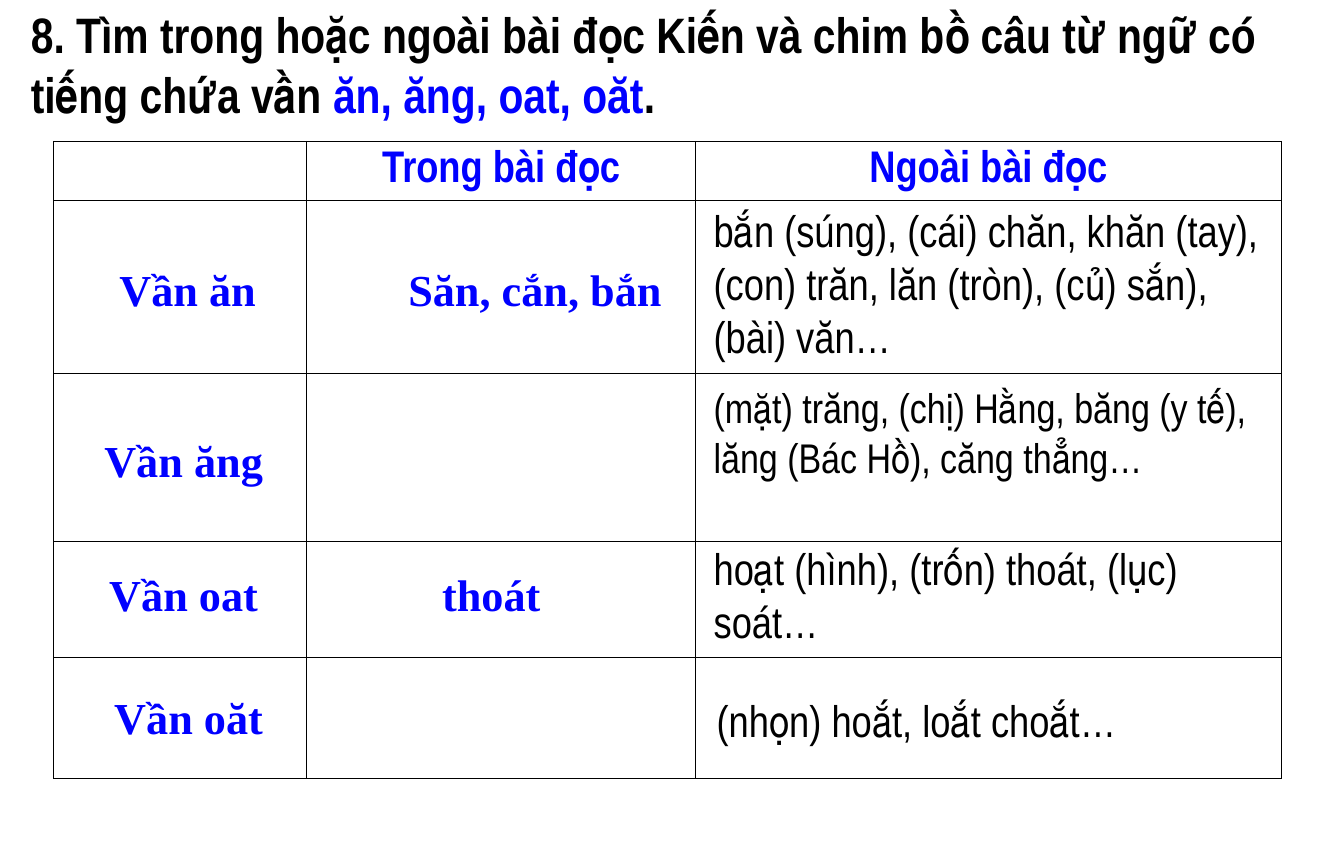
from dataclasses import dataclass

from lxml import etree
from pptx import Presentation
from pptx.dml.color import RGBColor
from pptx.enum.text import MSO_ANCHOR, MSO_AUTO_SIZE, PP_ALIGN
from pptx.oxml.ns import qn
from pptx.slide import Slide
from pptx.table import _Cell
from pptx.text.text import TextFrame, _Paragraph
from pptx.util import Inches, Pt

TOP, MIDDLE = MSO_ANCHOR.TOP, MSO_ANCHOR.MIDDLE
LEFT, CENTER = PP_ALIGN.LEFT, PP_ALIGN.CENTER
GROW = MSO_AUTO_SIZE.SHAPE_TO_FIT_TEXT

BLACK = RGBColor(0x00, 0x00, 0x00)
BLUE = RGBColor(0x00, 0x00, 0xFF)
NARROW, SERIF = "Arial Narrow", "Times New Roman"

TITLE = {"name": NARROW, "size": Pt(36), "bold": True}
HEADER = {"name": NARROW, "size": Pt(32), "bold": True}
ANSWER = {"name": SERIF, "size": Pt(32), "bold": True}
WORDS = {"name": NARROW, "size": Pt(32), "bold": False}
SMALL_WORDS = {**WORDS, "size": Pt(30)}

COLUMNS = (2.54, 3.91, 5.88)
ROWS = (0.54, 1.74, 1.69, 1.16, 1.22)
HEADINGS = ("", "Trong bài đọc", "Ngoài bài đọc")


@dataclass
class Entry:
    text: str
    left: float
    top: float
    width: float = 1.95
    height: float = 0.64
    fmt: dict | None = None
    wrap: bool = True


RHYMES = [
    Entry("Vần ăn", 0.91, 2.59),
    Entry("Vần ăng", 0.87, 4.3),
    Entry("Vần oat", 0.87, 5.65),
    Entry("Vần oăt", 0.92, 6.89),
    Entry("Săn, cắn, bắn", 3.96, 2.59, 2.83),
    Entry("thoát", 3.96, 5.65),
]
EXAMPLES = [
    Entry("bắn (súng), (cái) chăn, khăn (tay), (con) trăn, lăn (tròn), "
          "(củ) sắn), (bài) văn…", 7.07, 1.99, 5.79, 1.72, WORDS),
    Entry("(mặt) trăng, (chị) Hằng, băng (y tế), lăng (Bác Hồ), căng thẳng…",
          7.07, 3.79, 5.79, 2.12, SMALL_WORDS),
    Entry("hoạt (hình), (trốn) thoát, (lục) soát…",
          7.07, 5.39, 5.66, 1.72, WORDS),
    Entry("(nhọn) hoắt, loắt choắt…", 7.1, 6.92, 5.13, 0.64, WORDS, False),
]


def add_run(p: _Paragraph, text: str, fmt: dict, color: RGBColor) -> None:
    r = p.add_run()
    r.text = text
    for key, value in fmt.items():
        setattr(r.font, key, value)
    r.font.color.rgb = color


def set_frame(tf: TextFrame, wrap: bool = True) -> None:
    tf.word_wrap = wrap
    tf.auto_size = GROW
    tf.vertical_anchor = TOP


def add_title(slide: Slide) -> None:
    sp = slide.shapes.title
    sp.left, sp.top = Inches(0.21), Inches(-0.01)
    sp.width, sp.height = Inches(12.66), Inches(1.31)
    set_frame(sp.text_frame)
    p = sp.text_frame.paragraphs[0]
    p.alignment = LEFT
    add_run(p, "8. Tìm trong hoặc ngoài bài đọc Kiến và chim bồ câu từ ngữ "
               "có tiếng chứa vần ", TITLE, BLACK)
    add_run(p, "ăn, ăng, oat, oăt", TITLE, BLUE)
    add_run(p, ".", TITLE, BLACK)


def add_borders(cell: _Cell) -> None:
    tc_pr = cell._tc.get_or_add_tcPr()
    for side in ("a:lnL", "a:lnR", "a:lnT", "a:lnB"):
        ln = etree.SubElement(tc_pr, qn(side), w=str(Pt(1)))
        fill = etree.SubElement(ln, qn("a:solidFill"))
        etree.SubElement(fill, qn("a:srgbClr"), val=str(BLACK))


def add_grid(slide: Slide) -> None:
    table = slide.shapes.add_table(
        len(ROWS), len(COLUMNS), Inches(0.54), Inches(1.42),
        Inches(sum(COLUMNS)), Inches(sum(ROWS))).table
    table.first_row = table.horz_banding = False
    for column, width in zip(table.columns, COLUMNS):
        column.width = Inches(width)
    for row, height in zip(table.rows, ROWS):
        row.height = Inches(height)
    for cell in table.iter_cells():
        add_borders(cell)
        cell.fill.background()
    for cell, heading in zip(table.rows[0].cells, HEADINGS):
        if heading:
            cell.vertical_anchor = MIDDLE
            for side in ("left", "right", "top", "bottom"):
                setattr(cell, f"margin_{side}", Inches(0.03))
            p = cell.text_frame.paragraphs[0]
            p.alignment = CENTER
            add_run(p, heading, HEADER, BLUE)


def add_entry(slide: Slide, entry: Entry, align: PP_ALIGN,
              color: RGBColor) -> None:
    sp = slide.shapes.add_textbox(Inches(entry.left), Inches(entry.top),
                                  Inches(entry.width), Inches(entry.height))
    set_frame(sp.text_frame, entry.wrap)
    p = sp.text_frame.paragraphs[0]
    p.alignment = align
    add_run(p, entry.text, entry.fmt or ANSWER, color)


def main() -> None:
    prs = Presentation()
    prs.slide_width, prs.slide_height = Inches(13.5), Inches(8.5)
    slide = prs.slides.add_slide(prs.slide_layouts[5])

    # Question and empty grid
    add_title(slide)
    add_grid(slide)

    # Rhymes and answers laid over the grid
    for entry in RHYMES:
        add_entry(slide, entry, CENTER, BLUE)
    for entry in EXAMPLES:
        add_entry(slide, entry, LEFT, BLACK)

    prs.save("out.pptx")


if __name__ == "__main__":
    main()
